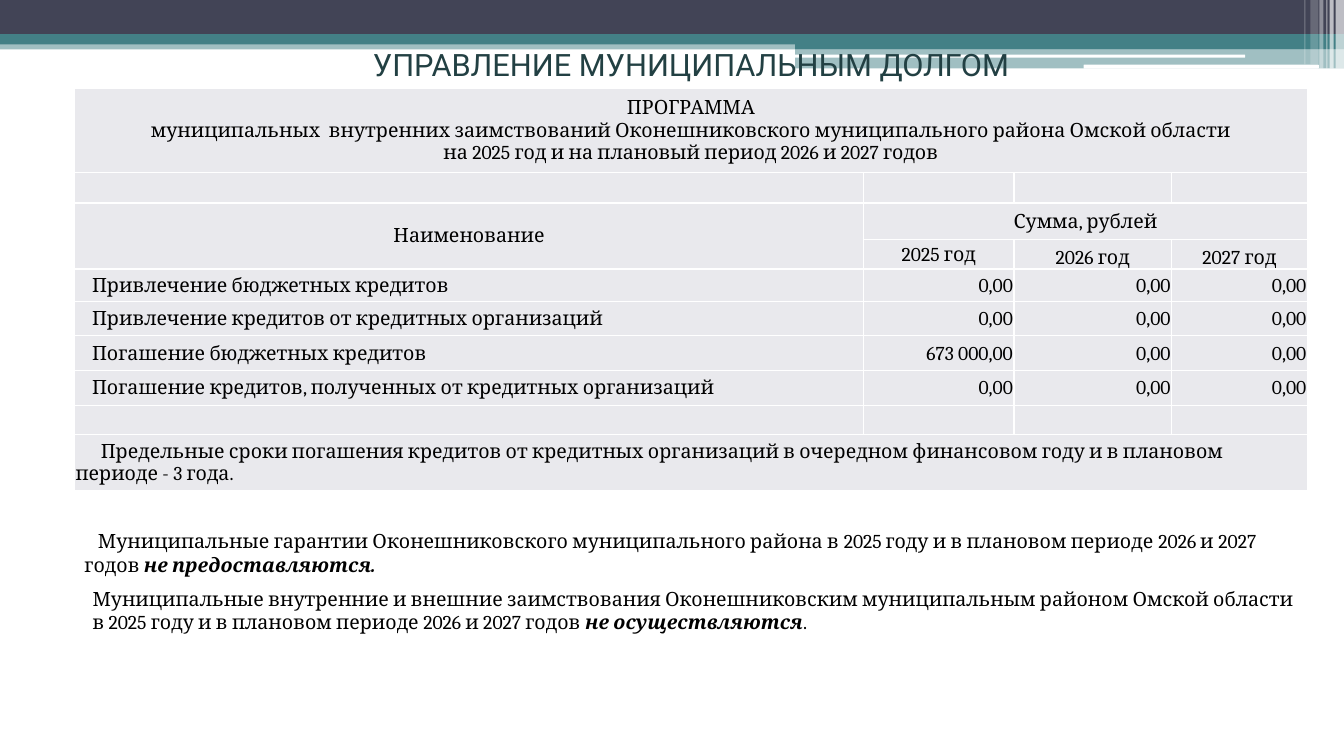
from lxml.etree import SubElement
from pptx import Presentation
from pptx.dml.color import RGBColor
from pptx.enum.shapes import MSO_SHAPE as Shape
from pptx.enum.text import MSO_ANCHOR as Anchor, MSO_AUTO_SIZE as Fit, PP_ALIGN as Align
from pptx.oxml.ns import qn
from pptx.util import Pt

TEAL = RGBColor(0x43, 0x80, 0x86)
NAVY = RGBColor(0x42, 0x44, 0x56)
WHITE = RGBColor(0xFF, 0xFF, 0xFF)
BLACK = RGBColor(0, 0, 0)
DARK = RGBColor(0x22, 0x40, 0x43)
GREY = RGBColor(0xE9, 0xE9, 0xED)

TITLE = "УПРАВЛЕНИЕ МУНИЦИПАЛЬНЫМ ДОЛГОМ"
HEAD = (
    "ПРОГРАММА\vмуниципальных  внутренних заимствований "
    "Оконешниковского муниципального района Омской области\n"
    "на 2025 год и на плановый период 2026 и 2027 годов"
)
LIMIT = (
    "Предельные сроки погашения кредитов от кредитных организаций "
    "в очередном финансовом году и в плановом периоде - 3 года."
)
ROWS = [
    [HEAD, "", "", ""],
    ["", "", "", ""],
    ["Наименование", "Сумма, рублей", "", ""],
    ["", "2025 год", "2026 год", "2027 год"],
    ["Привлечение бюджетных кредитов", "0,00", "0,00", "0,00"],
    ["Привлечение кредитов от кредитных организаций", "0,00", "0,00", "0,00"],
    ["Погашение бюджетных кредитов", "673 000,00", "0,00", "0,00"],
    ["Погашение кредитов, полученных от кредитных организаций", "0,00", "0,00", "0,00"],
    ["", "", "", ""],
    [LIMIT, "", "", ""],
]
WIDTHS = [563.6, 107.4, 112.6, 97]
HEIGHTS = [59.6, 22, 26.2, 21, 23, 24.8, 24.8, 25, 20.5, 40.4]
SPANS = [(0, 0, 0, 3), (2, 0, 3, 0), (2, 1, 2, 3), (9, 0, 9, 3)]
DATA = range(4, 8)

NOTES = [
    ((53.3, 374.4, 883.4, 41), 9.6, [
        ("Муниципальные гарантии Оконешниковского муниципального района "
         "в 2025 году и в плановом периоде 2026 и 2027 годов ", False),
        ("не предоставляются.", True),
    ]),
    ((59, 415.4, 874.8, 41), 0, [
        ("Муниципальные внутренние и внешние заимствования Оконешниковским "
         "муниципальным районом Омской области в 2025 году и в плановом "
         "периоде 2026 и 2027 годов ", False),
        ("не осуществляются", True),
        (".", False),
    ]),
]

RECT, ROUND = Shape.RECTANGLE, Shape.ROUNDED_RECTANGLE
BANDS = [
    (RECT, 0, 28.8, 960, 6.5, TEAL, 50),
    (RECT, 0, 0, 960, 24.5, NAVY, 100),
    (RECT, 0, 24.5, 960, 7.2, TEAL, 100),
    (RECT, 568, 28, 392, 7, TEAL, 100),
    (RECT, 568, 34.6, 392, 14.2, TEAL, 50),
    (ROUND, 567.4, 39, 322, 2.2, WHITE, 100),
    (ROUND, 774, 46.2, 168, 2.8, WHITE, 100),
    (RECT, 954, 0, 6, 49, WHITE, 65),
    (RECT, 949.7, 0, 2.9, 49, WHITE, 65),
    (RECT, 947.5, 0, 0.7, 49, WHITE, 60),
    (RECT, 942.5, 0, 2.9, 49, WHITE, 40),
    (RECT, 936, 0, 5.8, 46, WHITE, 20),
    (RECT, 931.7, 0, 0.7, 46, WHITE, 30),
]


def style(para, size=14, name="Cambria", color=BLACK):
    para.font.size = Pt(size)
    para.font.name = name
    para.font.color.rgb = color


def indent(para, gap):
    para._p.get_or_add_pPr().set("indent", str(Pt(gap)))


def place(shape, box):
    shape.left, shape.top, shape.width, shape.height = map(Pt, box)


def add_band(slide, kind, x, y, w, h, color, alpha):
    band = slide.shapes.add_shape(kind, Pt(x), Pt(y), Pt(w), Pt(h))
    band.shadow.inherit = False
    band.line.fill.background()
    band.fill.solid()
    band.fill.fore_color.rgb = color
    if alpha < 100:
        tone = band.fill._xPr.find(".//" + qn("a:srgbClr"))
        SubElement(tone, qn("a:alpha"), val=str(alpha * 1000))


def add_title(slide):
    title = slide.shapes.title
    place(title, (53.3, 28, 880.6, 35.4))
    frame = title.text_frame
    frame.text = TITLE
    frame.vertical_anchor = Anchor.MIDDLE
    para = frame.paragraphs[0]
    para.alignment = Align.CENTER
    style(para, 22, "Roboto", DARK)
    title.element.getparent().append(title.element)


def border(cell):
    props = cell._tc.get_or_add_tcPr()
    for side in ("lnL", "lnR", "lnT", "lnB"):
        line = SubElement(props, qn("a:" + side), w=str(Pt(1)))
        fill = SubElement(line, qn("a:solidFill"))
        SubElement(fill, qn("a:srgbClr"), val=str(WHITE))


def align(row, col):
    if row in DATA:
        return Align.RIGHT if col else Align.LEFT
    return Align.LEFT if row == 9 else Align.CENTER


def fill_cell(cell, row, col, text):
    border(cell)
    cell.fill.solid()
    cell.fill.fore_color.rgb = GREY
    cell.margin_left = Pt(12.5 if row in DATA and col == 0 else 0.7)
    cell.margin_right = cell.margin_top = Pt(0.7)
    cell.margin_bottom = 0
    low = row == 3 and col > 1
    cell.vertical_anchor = Anchor.BOTTOM if low else Anchor.MIDDLE
    cell.text = text
    for para in cell.text_frame.paragraphs:
        para.alignment = align(row, col)
        style(para)
        if text == LIMIT:
            indent(para, 18)


def add_grid(slide):
    table = slide.shapes.add_table(
        len(ROWS), len(WIDTHS), Pt(53.3), Pt(63.4),
        Pt(sum(WIDTHS)), Pt(sum(HEIGHTS))).table
    table.first_row = table.horz_banding = False
    for col, width in zip(table.columns, WIDTHS):
        col.width = Pt(width)
    for row, height in zip(table.rows, HEIGHTS):
        row.height = Pt(height)
    for r, texts in enumerate(ROWS):
        for c, text in enumerate(texts):
            fill_cell(table.cell(r, c), r, c, text)
    for top, left, low, right in SPANS:
        table.cell(top, left).merge(table.cell(low, right))


def add_note(slide, box, gap, parts):
    frame = slide.shapes.add_textbox(*map(Pt, box)).text_frame
    frame.word_wrap = True
    frame.auto_size = Fit.SHAPE_TO_FIT_TEXT
    para = frame.paragraphs[0]
    style(para)
    indent(para, gap)
    for text, strong in parts:
        run = para.add_run()
        run.text = text
        if strong:
            run.font.bold = run.font.italic = True


def main():
    deck = Presentation()
    deck.slide_width, deck.slide_height = Pt(960), Pt(540)
    slide = deck.slides.add_slide(deck.slide_layouts[5])
    for band in BANDS:
        add_band(slide, *band)
    add_title(slide)
    add_grid(slide)
    for note in NOTES:
        add_note(slide, *note)
    deck.save("out.pptx")


if __name__ == "__main__":
    main()
